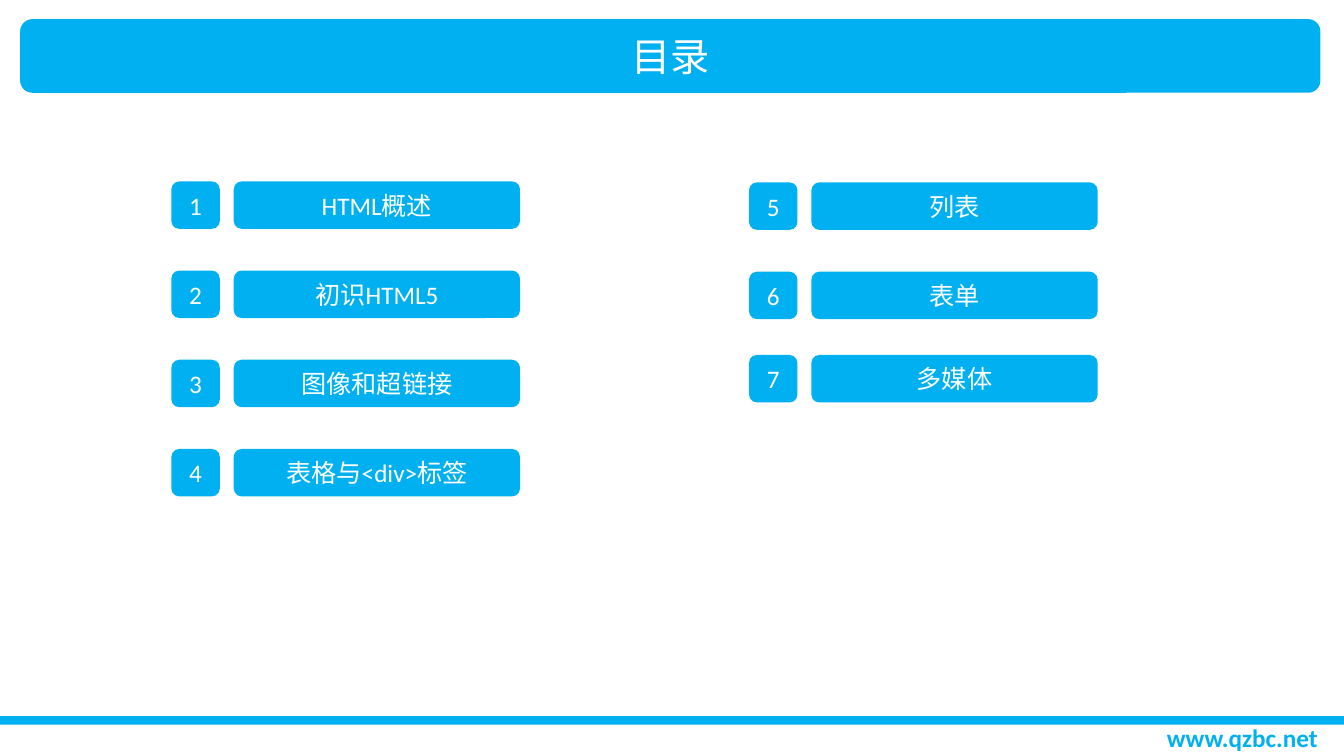
"""Build the contents slide of an HTML course."""
from dataclasses import dataclass

from pptx import Presentation
from pptx.dml.color import RGBColor
from pptx.enum import shapes, text
from pptx.util import Pt


@dataclass(frozen=True)
class Theme:
    blue: RGBColor = RGBColor(0x00, 0xB0, 0xF0)
    white: RGBColor = RGBColor(0xFF, 0xFF, 0xFF)
    font: str = "Calibri"
    title: float = 28
    body: float = 18


@dataclass(frozen=True)
class Box:
    left: float
    top: float
    width: float
    height: float

    def emu(self) -> tuple:
        return Pt(self.left), Pt(self.top), Pt(self.width), Pt(self.height)


@dataclass(frozen=True)
class Column:
    left: float
    tops: tuple
    first: int
    topics: tuple


THEME = Theme()
ROUND = shapes.MSO_SHAPE.ROUNDED_RECTANGLE
TITLE_BAR = Box(14.4, 13.7, 928.8, 52.6)
FOOTER_RULE = Box(0, 511.6, 960, 6)
FOOTER_SITE = Box(825.8, 512.6, 123.1, 28.8)
ROW_HEIGHT, NUMBER_WIDTH, TOPIC_WIDTH, TOPIC_OFFSET = 33.9, 34.6, 204.5, 44.6
COLUMNS = (
    Column(122.4, tuple(129.6 + 63.7 * i for i in range(4)), 1,
           ("HTML概述", "初识HTML5", "图像和超链接", "表格与<div>标签")),
    Column(535, (130.3, 194.1, 253.6), 5, ("列表", "表单", "多媒体")),
)


def write(sp, words: str, size: float, color: RGBColor, bold: bool = False) -> None:
    """Put one centred line of text into a shape."""
    tf = sp.text_frame
    tf.text = words
    p = tf.paragraphs[0]
    p.alignment = text.PP_ALIGN.CENTER
    font = p.runs[0].font
    font.color.rgb = color
    for name, value in {"name": THEME.font, "size": Pt(size), "bold": bold}.items():
        setattr(font, name, value)


def add_block(s, kind, box: Box, words: str = ""):
    """Draw a flat blue block, with white text if any is given."""
    sp = s.shapes.add_shape(kind, *box.emu())
    sp.shadow.inherit = False
    sp.fill.solid()
    sp.fill.fore_color.rgb = THEME.blue
    sp.line.fill.background()
    if words:
        sp.text_frame.vertical_anchor = text.MSO_ANCHOR.MIDDLE
        write(sp, words, THEME.body, THEME.white)
    return sp


def add_title(s, words: str) -> None:
    """Set the title placeholder on top of its rounded bar."""
    title = s.shapes.title
    for name, value in zip(("left", "top", "width", "height"), TITLE_BAR.emu()):
        setattr(title, name, value)
    for name, value in {"vertical_anchor": text.MSO_ANCHOR.MIDDLE,
                        "auto_size": text.MSO_AUTO_SIZE.NONE}.items():
        setattr(title.text_frame, name, value)
    write(title, words, THEME.title, THEME.white)
    title.element.addprevious(add_block(s, ROUND, TITLE_BAR).element)


def add_column(s, column: Column) -> None:
    """Draw one column of numbered topics."""
    for number, (top, topic) in enumerate(zip(column.tops, column.topics), column.first):
        add_block(s, ROUND, Box(column.left, top, NUMBER_WIDTH, ROW_HEIGHT), str(number))
        add_block(s, ROUND, Box(column.left + TOPIC_OFFSET, top, TOPIC_WIDTH, ROW_HEIGHT), topic)


def add_footer(s, site: str) -> None:
    """Draw the footer rule and the site address."""
    add_block(s, shapes.MSO_SHAPE.RECTANGLE, FOOTER_RULE)
    sp = s.shapes.add_textbox(*FOOTER_SITE.emu())
    for name, value in {"word_wrap": False,
                        "auto_size": text.MSO_AUTO_SIZE.SHAPE_TO_FIT_TEXT}.items():
        setattr(sp.text_frame, name, value)
    write(sp, site, THEME.body, THEME.blue, bold=True)


def main() -> None:
    """Build and save the slide."""
    prs = Presentation()
    prs.slide_width, prs.slide_height = Pt(960), Pt(540)
    s = prs.slides.add_slide(prs.slide_layouts[5])
    add_title(s, "目录")
    add_footer(s, "www.qzbc.net")
    for column in COLUMNS:
        add_column(s, column)
    prs.save("out.pptx")


if __name__ == "__main__":
    main()
